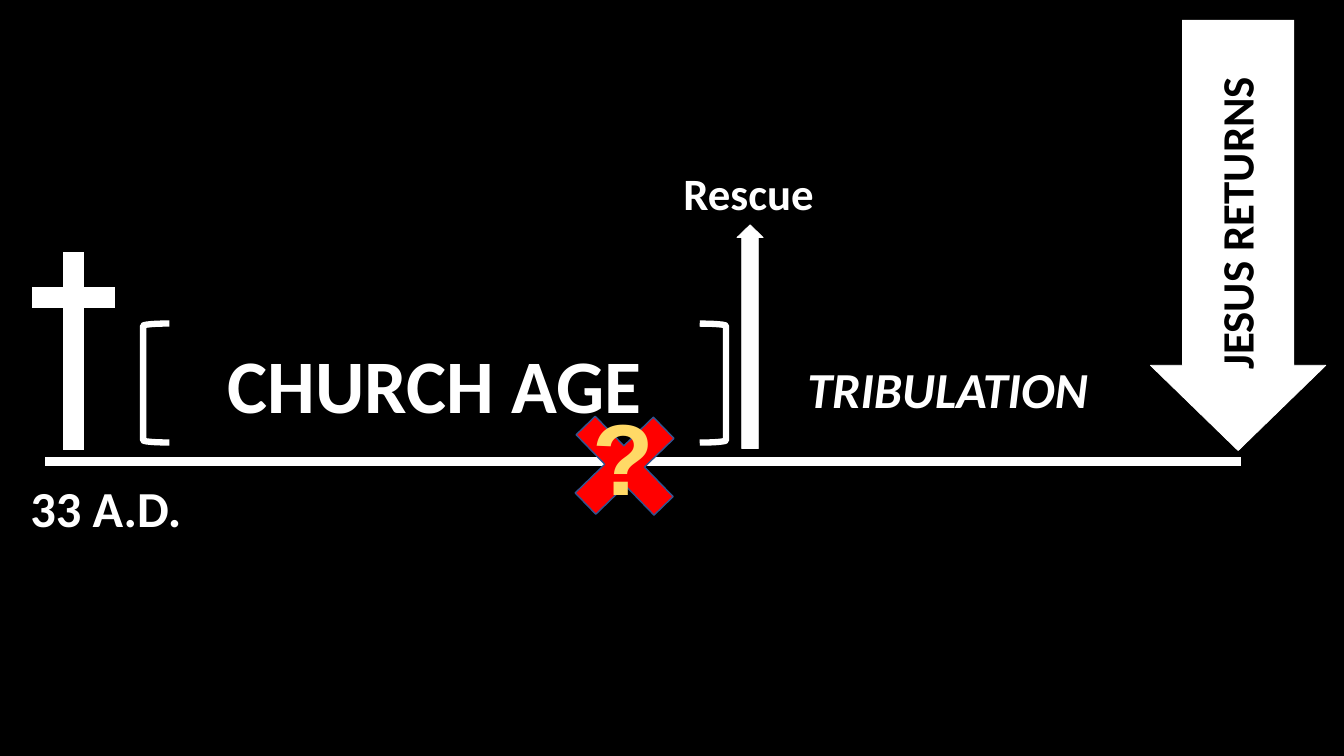
"""Builds a one-slide timeline from the cross to the return of Jesus."""
from pptx import Presentation
from pptx.dml.color import RGBColor
from pptx.enum.shapes import MSO_CONNECTOR as Connector, MSO_SHAPE as Shape
from pptx.enum.text import MSO_AUTO_SIZE as AutoSize, PP_ALIGN as Align
from pptx.oxml.ns import qn
from pptx.util import Inches, Pt
from lxml.etree import SubElement

WHITE = RGBColor(0xFF, 0xFF, 0xFF)
BLACK = RGBColor(0x00, 0x00, 0x00)
RED = RGBColor(0xFF, 0x00, 0x00)
BLUE = RGBColor(0x32, 0x54, 0x91)
GOLD = RGBColor(0xFF, 0xD9, 0x66)


def add_line(page, start, end, weight):
    """Draw a straight white line between two points."""
    line = page.shapes.add_connector(
        Connector.STRAIGHT, *(Inches(value) for value in (*start, *end)))
    line.line.color.rgb = WHITE
    line.line.width = Pt(weight)
    SubElement(line._element.spPr, qn("a:effectLst"))


def add_outline(page, kind, box, fill=None, line=WHITE, weight=0.5,
                rotation=0, adjustments=()):
    """Place a preset shape in the box, unfilled unless a fill is given."""
    shape = page.shapes.add_shape(kind, *(Inches(value) for value in box))
    shape.shadow.inherit = False
    shape.rotation = rotation
    if fill is None:
        shape.fill.background()
    else:
        shape.fill.solid()
        shape.fill.fore_color.rgb = fill
    shape.line.color.rgb = line
    shape.line.width = Pt(weight)
    for index, value in enumerate(adjustments):
        shape.adjustments[index] = value


def add_label(page, box, text, size, color=WHITE, rotation=0, **formats):
    """Write one centred bold line of text in the box."""
    label = page.shapes.add_textbox(*(Inches(value) for value in box))
    label.rotation = rotation
    frame = label.text_frame
    frame.word_wrap = True
    frame.auto_size = AutoSize.SHAPE_TO_FIT_TEXT
    para = frame.paragraphs[0]
    para.alignment = Align.CENTER
    span = para.add_run()
    span.text = text
    values = {"name": "Calibri", "size": Pt(size), "bold": True, **formats}
    for name, value in values.items():
        setattr(span.font, name, value)
    span.font.color.rgb = color


def add_arrow(page, box, rotation=0):
    """Draw a white block arrow filling the box."""
    add_outline(page, Shape.UP_ARROW, box, fill=WHITE, rotation=rotation,
                adjustments=(0.635, 0.486))


def add_cross(page, box):
    """Draw the cross with its date below."""
    left, top, width, height = box
    middle, beam = left + width / 2, top + 0.45
    add_line(page, (middle, top), (middle, top + height), 15)
    add_line(page, (left, beam), (left + width, beam), 15)
    add_label(page, (middle - 0.96, top + 2.18, 2.56, 0.71), "33 A.D.", 36)


def add_church_age(page, box):
    """Draw the bracketed church age."""
    left, top, width, height = box
    bracket = 0.26
    for edge, rotation in ((left, 0), (left + width - bracket, 180)):
        add_outline(page, Shape.LEFT_BRACKET, (edge, top, bracket, height),
                    weight=4.5, rotation=rotation)
    add_label(page, (left, top + 0.09, width, 1.01), "CHURCH AGE", 54)


def add_return(page, box):
    """Draw the large downward arrow with its upright label."""
    left, top, width, height = box
    add_arrow(page, box, rotation=180)
    length, depth = 4.12, 0.64
    label = (left + (width - length) / 2 - 0.02,
             top + (height - depth) / 2 - 0.12, length, depth)
    add_label(page, label, "JESUS RETURNS", 32, BLACK, rotation=270)


def add_rescue(page, box):
    """Draw the thin upward arrow with its label above."""
    left, top, width, height = box
    add_arrow(page, box)
    add_label(page, (left - 0.95, top - 0.64, 2.13, 0.64), "Rescue", 32)


def add_question(page, box):
    """Draw the red X with a question mark over it."""
    left, top, width, height = box
    add_outline(page, Shape.CROSS, box, fill=RED, line=BLUE, weight=1,
                rotation=45.9, adjustments=(0.378,))
    add_label(page, (left + 0.06, top - 0.21, 0.97, 1.31), "?", 72, GOLD,
              name="Arial")


def main():
    """Build and save the deck."""
    deck = Presentation()
    deck.slide_width, deck.slide_height = Inches(13.33), Inches(7.5)
    page = deck.slides.add_slide(deck.slide_layouts[6])
    page.background.fill.solid()
    page.background.fill.fore_color.rgb = BLACK

    add_line(page, (0.45, 4.58), (12.31, 4.58), 6)
    add_cross(page, (0.32, 2.5, 0.82, 1.96))
    add_church_age(page, (1.42, 3.21, 5.78, 1.18))
    add_label(page, (7.14, 3.5, 4.52, 0.71), "TRIBULATION", 36, italic=True)
    add_return(page, (11.41, 0.2, 1.74, 4.27))
    add_rescue(page, (7.31, 2.23, 0.26, 2.22))
    add_question(page, (5.64, 4.08, 1.11, 1.08))
    deck.save("out.pptx")


if __name__ == "__main__":
    main()
